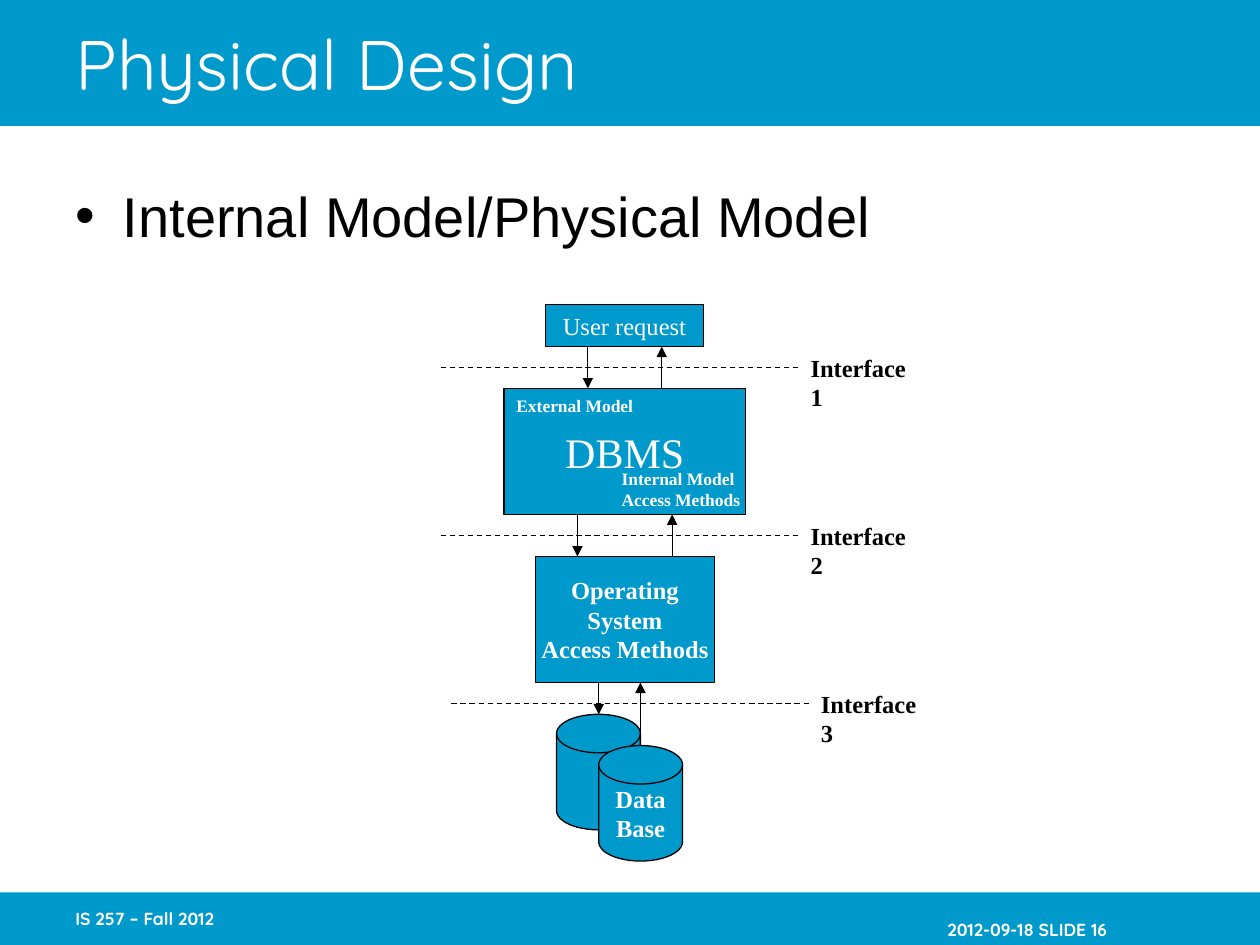
from lxml import etree
from pptx import Presentation
from pptx.dml.color import RGBColor
from pptx.enum.dml import MSO_LINE
from pptx.enum.shapes import MSO_CONNECTOR, MSO_SHAPE
from pptx.enum.text import MSO_ANCHOR, MSO_AUTO_SIZE, PP_ALIGN
from pptx.oxml.ns import qn
from pptx.util import Cm, Pt

RECT, DISK = MSO_SHAPE.RECTANGLE, MSO_SHAPE.FLOWCHART_MAGNETIC_DISK
STRAIGHT, DASH = MSO_CONNECTOR.STRAIGHT, MSO_LINE.DASH
LEFT, CENTER = PP_ALIGN.LEFT, PP_ALIGN.CENTER
TOP, MIDDLE = MSO_ANCHOR.TOP, MSO_ANCHOR.MIDDLE
NO_AUTOFIT = MSO_AUTO_SIZE.NONE

BLUE, WHITE, BLACK = "0099CC", "FFFFFF", "000000"
SERIF, SANS, ROUNDED = "Times New Roman", "Arial", "Quicksand"

TITLE = "Physical Design"
TOPIC = "Internal Model/Physical Model"
BANDS = [(0, 2.54), (17.99, 1.06)]
FOOTERS = [
    ("IS 257 – Fall 2012", 1.27, 17.99),
    ("2012-09-18 SLIDE 16", 18.85, 18.21),
]
STAGES = {
    "os": (RECT, 10.8, 11.22, 3.6, 2.54, "Operating\nSystem\nAccess Methods", 14, True),
    "back disk": (DISK, 11.22, 14.4, 1.69, 2.33, "", 14, True),
    "front disk": (DISK, 12.07, 15.03, 1.69, 2.33, "Data\nBase", 14, True),
    "request": (RECT, 11, 6.14, 3.18, 0.85, "User request", 14, False),
    "dbms": (RECT, 10.16, 7.83, 4.87, 2.54, "DBMS", 24, False),
}
MODELS = [
    ("Internal Model\nAccess Methods", 12.28, 9.31, 2.92, 1.1),
    ("External Model", 10.16, 7.83, 2.87, 0.68),
]
FLOWS = [
    ("os", "back disk", 12.07),
    ("front disk", "os", 12.91),
    ("dbms", "os", 11.64),
    ("os", "dbms", 13.55),
    ("request", "dbms", 11.85),
    ("dbms", "request", 13.34),
]
INTERFACES = [
    ("Interface 1", 8.89, 7.41),
    ("Interface 2", 8.89, 10.8),
    ("Interface 3", 9.1, 14.18),
]
INTERFACE_LENGTH = 7.2


def rgb(color):
    return RGBColor.from_string(color)


def write(frame, text, size, font, color, bold=False, align=LEFT, anchor=TOP):
    frame.text = text
    frame.word_wrap = False
    frame.vertical_anchor = anchor
    for paragraph in frame.paragraphs:
        paragraph.alignment = align
        for run in paragraph.runs:
            run.font.size = Pt(size)
            run.font.name = font
            run.font.bold = bold
            run.font.color.rgb = rgb(color)


def place(shape, *box):
    shape.left, shape.top, shape.width, shape.height = map(Cm, box)


def add_block(preset, *box, outline=None):
    block = shapes.add_shape(preset, *map(Cm, box))
    block.shadow.inherit = False
    block.fill.solid()
    block.fill.fore_color.rgb = rgb(BLUE)
    if outline:
        block.line.color.rgb = rgb(outline)
        block.line.width = Pt(0.75)
    else:
        block.line.fill.background()
    return block


def add_label(text, box, size, font, color, anchor=TOP):
    label = shapes.add_textbox(*map(Cm, box))
    write(label.text_frame, text, size, font, color, True, anchor=anchor)
    return label


def add_line(*ends):
    connector = shapes.add_connector(STRAIGHT, *map(Cm, ends))
    connector.line.color.rgb = rgb(BLACK)
    connector.line.width = Pt(0.75)
    etree.SubElement(connector._element.spPr, qn("a:effectLst"))
    return connector.line


prs = Presentation()
prs.slide_width, prs.slide_height = Cm(25.4), Cm(19.05)
slide = prs.slides.add_slide(prs.slide_layouts[1])
shapes = slide.shapes
title, body = slide.placeholders

for top, height in BANDS:
    band = add_block(RECT, 0, top, 25.4, height)
    title._element.addprevious(band._element)

place(title, 1.27, 0, 21.59, 2.54)
write(title.text_frame, TITLE, 40, ROUNDED, WHITE, anchor=MIDDLE)
title.text_frame.auto_size = NO_AUTOFIT

place(body, 1.27, 3.54, 22.86, 13.6)
body.text_frame.text = TOPIC
bullet_properties = body.text_frame.paragraphs[0]._p.get_or_add_pPr()
bullet_properties.set("marL", str(Cm(0.95)))
bullet_properties.set("indent", str(-Cm(0.95)))
write(body.text_frame, TOPIC, 32, SANS, BLACK)
body.text_frame.word_wrap = True
body.text_frame.auto_size = NO_AUTOFIT
body.text_frame.paragraphs[0].space_before = Pt(0)
etree.SubElement(bullet_properties, qn("a:buChar")).set("char", "•")

for text, left, top in FOOTERS:
    add_label(text, (left, top, 5.28, 1.06), 10, ROUNDED, WHITE, MIDDLE)

for name, (preset, left, top, width, height, text, size, bold) in STAGES.items():
    stage = add_block(preset, left, top, width, height, outline=BLACK)
    write(stage.text_frame, text, size, SERIF, WHITE, bold, CENTER, MIDDLE)

dbms_parts = [stage]
for text, *box in MODELS:
    dbms_parts.append(add_label(text, box, 10, SERIF, WHITE))
shapes.add_group_shape(dbms_parts)

for source, target, x in FLOWS:
    source_top, source_height = STAGES[source][2], STAGES[source][4]
    target_top, target_height = STAGES[target][2], STAGES[target][4]
    if source_top < target_top:
        ends = source_top + source_height, target_top
    else:
        ends = source_top, target_top + target_height
    arrow = add_line(x, ends[0], x, ends[1])
    etree.SubElement(arrow._get_or_add_ln(), qn("a:tailEnd")).set("type", "triangle")

for text, left, y in INTERFACES:
    right = left + INTERFACE_LENGTH
    add_line(left, y, right, y).dash_style = DASH
    add_label(text, (right, y - 0.42, 2.79, 0.85), 14, SERIF, BLACK)

prs.save("out.pptx")
